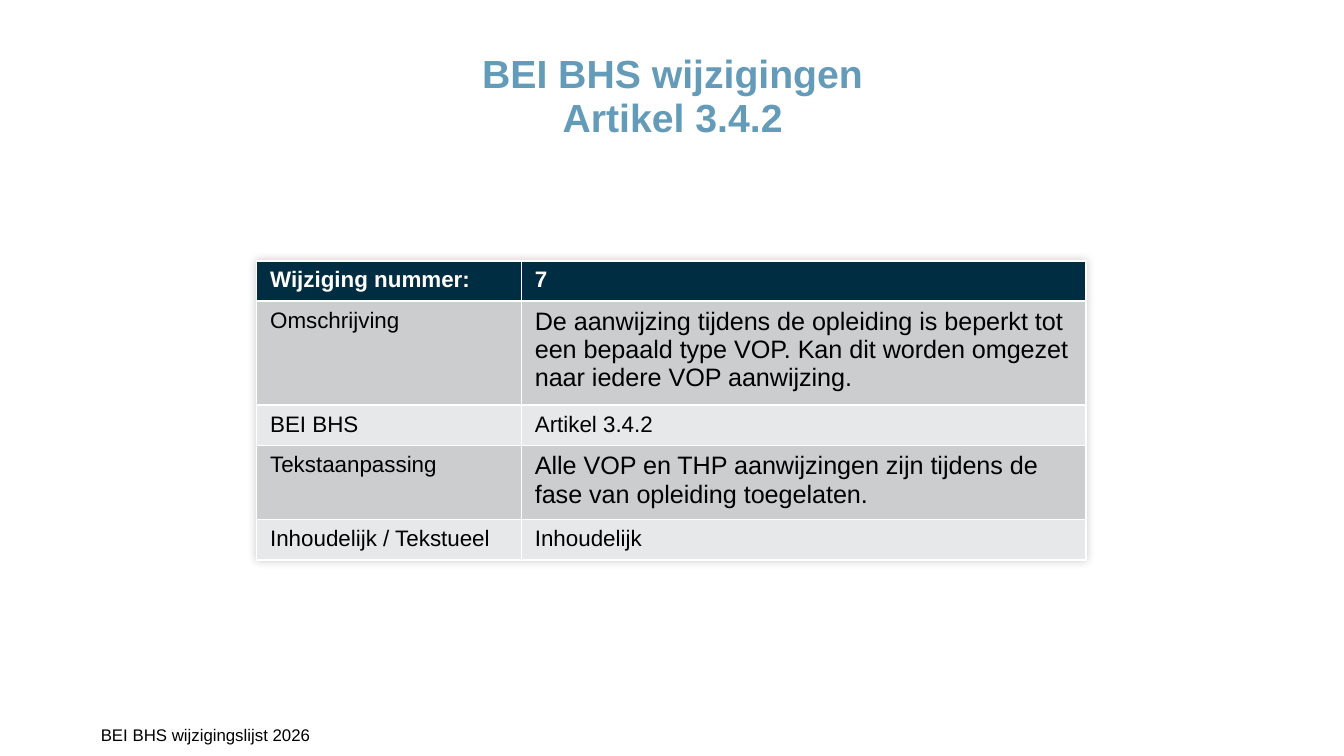
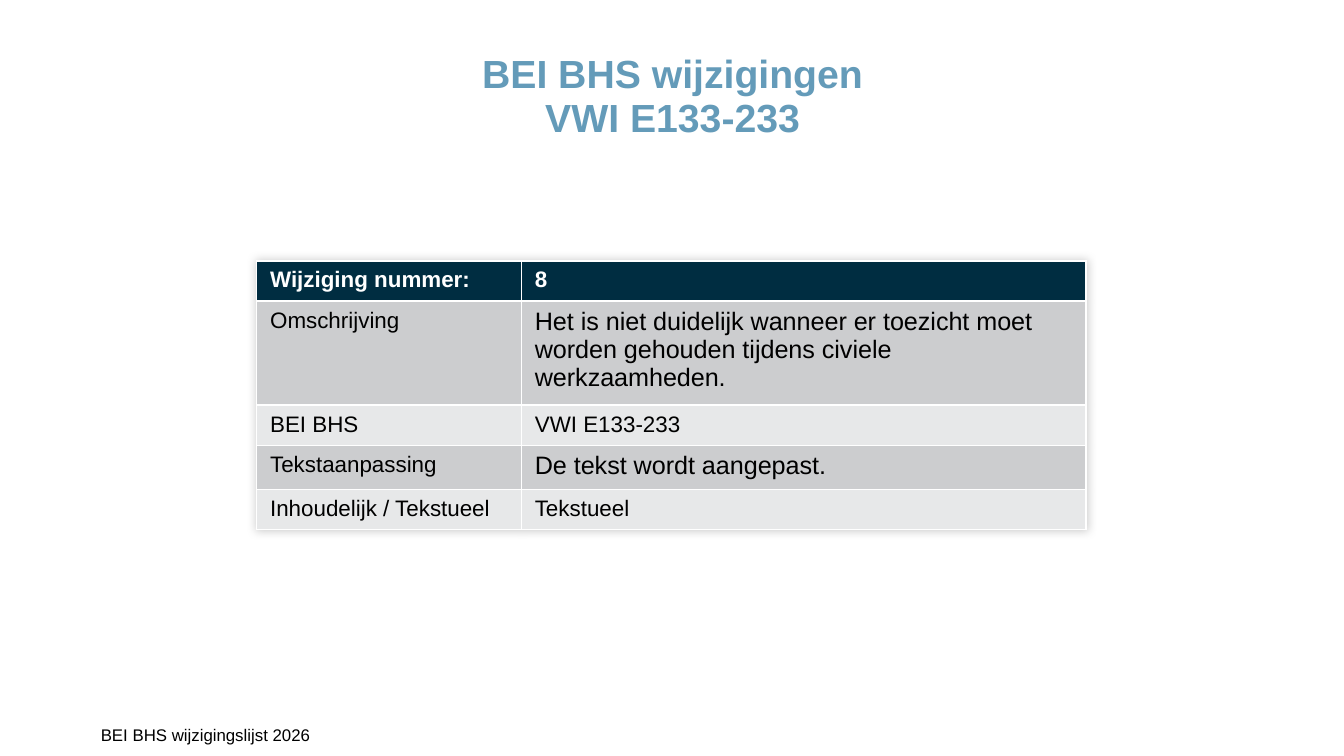
from dataclasses import dataclass

from pptx import Presentation
from pptx import util as u
from pptx.dml.color import RGBColor
from pptx.enum import text
from pptx.oxml import parse_xml
from pptx.oxml.ns import nsdecls


@dataclass(frozen=True)
class Theme:
    font: str = "Arial"
    title: str = "649BB9"
    ink: str = "000000"
    white: str = "FFFFFF"
    header: str = "002D41"
    bands: tuple = ("CCCDCF", "E7E8E9")
    title_size: float = 21
    cell_size: float = 12
    body_size: float = 13.5
    footer_size: float = 9


THEME = Theme()
LABELS = ["Wijziging nummer:", "Omschrijving", "BEI BHS", "Tekstaanpassing",
          "Inhoudelijk / Tekstueel"]
BODY_ROWS = (1, 3)
ROW_HEIGHTS = [0.3, 0.53, 0.3, 0.3, 0.3]
COLUMN_WIDTHS = [1.97, 4.2]
CHANGES = [
    (2.24, ["7",
            "De aanwijzing tijdens de opleiding is beperkt tot een bepaald type VOP. "
            "Kan dit worden omgezet naar iedere VOP aanwijzing.",
            "Artikel 3.4.2",
            "Alle VOP en THP aanwijzingen zijn tijdens de fase van opleiding toegelaten.",
            "Inhoudelijk"]),
    (2.01, ["8",
            "Het is niet duidelijk wanneer er toezicht moet worden gehouden tijdens "
            "civiele werkzaamheden.",
            "VWI E133-233",
            "De tekst wordt aangepast.",
            "Tekstueel"]),
]
SHADOW = (f'<a:effectLst {nsdecls("a")}><a:outerShdw blurRad="63500" algn="ctr">'
          '<a:srgbClr val="000000"><a:alpha val="20000"/></a:srgbClr>'
          '</a:outerShdw></a:effectLst>')


def write(frame, words, size, color, bold=False, **para_format):
    """Put words in the frame's first paragraph; a line feed becomes a line break."""
    para = frame.paragraphs[0]
    for name, value in para_format.items():
        setattr(para, name, value)
    for index, line in enumerate(words.split("\n")):
        if index:
            para.add_line_break()
        span = para.add_run()
        span.text = line
        for name, value in {"name": THEME.font, "size": u.Pt(size), "bold": bold}.items():
            setattr(span.font, name, value)
        span.font.color.rgb = RGBColor.from_string(color)


def add_text(page, bounds, words, size, color, indent=0, **styles):
    box = page.shapes.add_textbox(*map(u.Inches, bounds))
    frame_format = {"word_wrap": True, "vertical_anchor": text.MSO_ANCHOR.TOP,
                    "margin_left": u.Inches(indent), "margin_right": 0,
                    "margin_top": 0, "margin_bottom": 0}
    for name, value in frame_format.items():
        setattr(box.text_frame, name, value)
    write(box.text_frame, words, size, color, **styles)


deck = Presentation()
deck.slide_width = u.Inches(10)
deck.slide_height = deck.slide_width * 9 // 16

for table_height, values in CHANGES:
    page = deck.slides.add_slide(deck.slide_layouts[6])
    add_text(page, (1.91, 0.39, 6.19, 0.94), f"BEI BHS wijzigingen\n{values[2]}",
             THEME.title_size, THEME.title, bold=True,
             alignment=text.PP_ALIGN.CENTER, line_spacing=0.95)

    holder = page.shapes.add_table(len(LABELS), 2, u.Inches(1.91), u.Inches(1.94),
                                   u.Inches(sum(COLUMN_WIDTHS)), u.Inches(table_height))
    table = holder.table
    table._tbl.tblPr.insert(0, parse_xml(SHADOW))
    for column, width in zip(table.columns, COLUMN_WIDTHS):
        column.width = u.Inches(width)
    for row, height in zip(table.rows, ROW_HEIGHTS):
        row.height = u.Inches(height)
    holder.height = u.Inches(table_height)

    for r, row_words in enumerate(zip(LABELS, values)):
        is_header = r == 0
        fill = THEME.header if is_header else THEME.bands[(r - 1) % 2]
        for c, words in enumerate(row_words):
            cell = table.cell(r, c)
            size = THEME.body_size if c == 1 and r in BODY_ROWS else THEME.cell_size
            write(cell.text_frame, words, size,
                  THEME.white if is_header else THEME.ink, bold=is_header)
            cell.fill.solid()
            cell.fill.fore_color.rgb = RGBColor.from_string(fill)

    add_text(page, (0, 5.39, 4.72, 0.24), "BEI BHS wijzigingslijst 2026",
             THEME.footer_size, THEME.ink, indent=0.75)

deck.save("out.pptx")
